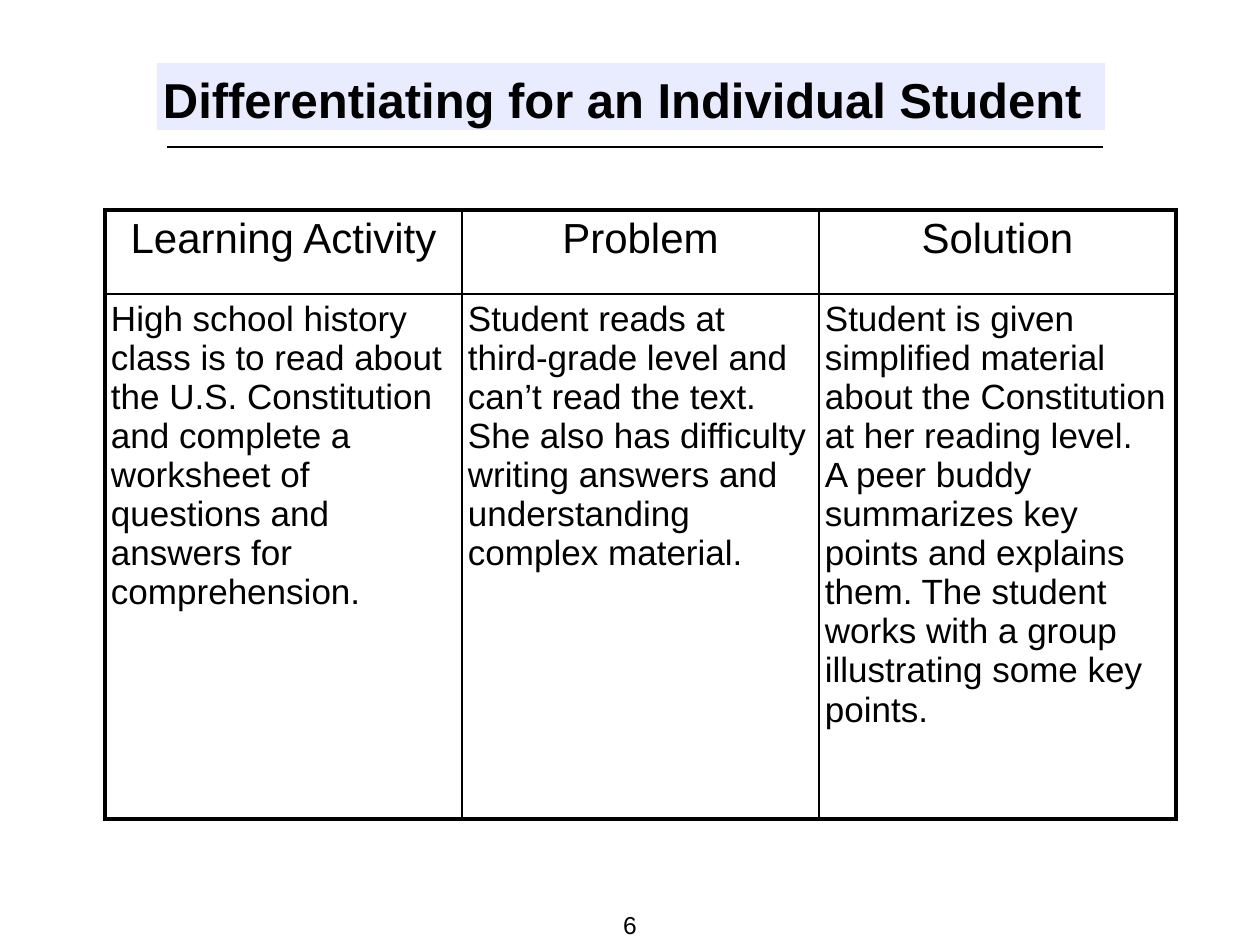
from dataclasses import dataclass

from lxml import etree
from pptx import Presentation
from pptx.dml.color import RGBColor
from pptx.enum.shapes import MSO_CONNECTOR, MSO_SHAPE
from pptx.enum.text import MSO_ANCHOR, PP_ALIGN
from pptx.oxml.ns import qn
from pptx.util import Emu, Pt

LEFT, CENTER = PP_ALIGN.LEFT, PP_ALIGN.CENTER
TOP, BOTTOM = MSO_ANCHOR.TOP, MSO_ANCHOR.BOTTOM
RECT, STRAIGHT = MSO_SHAPE.RECTANGLE, MSO_CONNECTOR.STRAIGHT


@dataclass(frozen=True)
class Theme:
    font: str = "Arial"
    ink: str = "000000"
    band: str = "E9ECFF"
    title: int = 28
    header: int = 24
    body: int = 20
    number: int = 14
    rule: float = 0.75
    inner: float = 1
    outer: float = 2.25
    inset: int = 6


THEME = Theme()

HEADERS = ["Learning Activity", "Problem", "Solution"]
DETAILS = [
    "High school history class is to read about the U.S. Constitution and "
    "complete a worksheet of questions and answers for comprehension.",
    "Student reads at third-grade level and can’t read the text. She also has "
    "difficulty writing answers and understanding complex material.",
    "Student is given simplified material about the Constitution at her reading level.\n"
    "A peer buddy summarizes key points and explains them. The student works "
    "with a group illustrating some key points.",
]


def px(n):
    return Emu(round(n * 914400 / 126))


def set_attrs(obj, values):
    for name, value in values.items():
        setattr(obj, name, value)


def set_margins(obj):
    set_attrs(obj, {f"margin_{side}": px(THEME.inset)
                    for side in ("left", "top", "right", "bottom")})


def write(tf, text, size, align=LEFT, bold=False):
    tf.text = text
    for p in tf.paragraphs:
        p.alignment = align
        set_attrs(p.font, {"name": THEME.font, "size": Pt(size), "bold": bold})
        p.font.color.rgb = RGBColor.from_string(THEME.ink)


def add_border(cell, side, width):
    ln = etree.SubElement(cell._tc.get_or_add_tcPr(), qn(f"a:ln{side}"), w=str(Pt(width)))
    fill = etree.SubElement(ln, qn("a:solidFill"))
    etree.SubElement(fill, qn("a:srgbClr"), val=THEME.ink)


def add_title(s, x, y, w, h):
    band = s.shapes.add_shape(RECT, px(x), px(y), px(w), px(h))
    band.shadow.inherit = False
    band.fill.solid()
    band.fill.fore_color.rgb = RGBColor.from_string(THEME.band)
    band.line.fill.background()
    tf = band.text_frame
    set_attrs(tf, {"word_wrap": False, "vertical_anchor": TOP})
    set_margins(tf)
    write(tf, "Differentiating for an Individual Student", THEME.title, bold=True)

    rule_y = px(y + h + 17)
    rule = s.shapes.add_connector(STRAIGHT, px(x + 10), rule_y, px(x + w - 2), rule_y)
    rule.line.width = Pt(THEME.rule)
    rule.line.color.rgb = RGBColor.from_string(THEME.ink)
    etree.SubElement(rule._element.spPr, qn("a:effectLst"))


def add_activity_table(s, x, y, w, h, header_h):
    rows = [(HEADERS, THEME.header, CENTER), (DETAILS, THEME.body, LEFT)]
    last_row, last_col = len(rows) - 1, len(HEADERS) - 1
    table = s.shapes.add_table(len(rows), len(HEADERS), px(x), px(y), px(w), px(h)).table
    set_attrs(table, {"first_row": False, "horz_banding": False})
    for col in table.columns:
        col.width = px(w / len(HEADERS))
    for row, height in zip(table.rows, (header_h, h - header_h)):
        row.height = px(height)
    for i, (texts, size, align) in enumerate(rows):
        for j, text in enumerate(texts):
            cell = table.cell(i, j)
            set_margins(cell)
            write(cell.text_frame, text, size, align)
            edges = {"L": j == 0, "R": j == last_col, "T": i == 0, "B": i == last_row}
            for side, is_outer in edges.items():
                add_border(cell, side, THEME.outer if is_outer else THEME.inner)
            cell.fill.background()


def add_page_number(s, x, y, w, h):
    tf = s.shapes.add_textbox(px(x), px(y), px(w), px(h)).text_frame
    set_attrs(tf, {"word_wrap": False, "vertical_anchor": BOTTOM})
    set_margins(tf)
    write(tf, "6", THEME.number, CENTER)


def main():
    prs = Presentation()
    set_attrs(prs, {"slide_width": px(1260), "slide_height": px(945)})
    s = prs.slides.add_slide(prs.slide_layouts[6])
    add_page_number(s, 616, 902, 28, 43)
    add_activity_table(s, 105, 210, 1071, 609, 84)
    add_title(s, 157, 63, 948, 67)
    prs.save("out.pptx")


if __name__ == "__main__":
    main()
